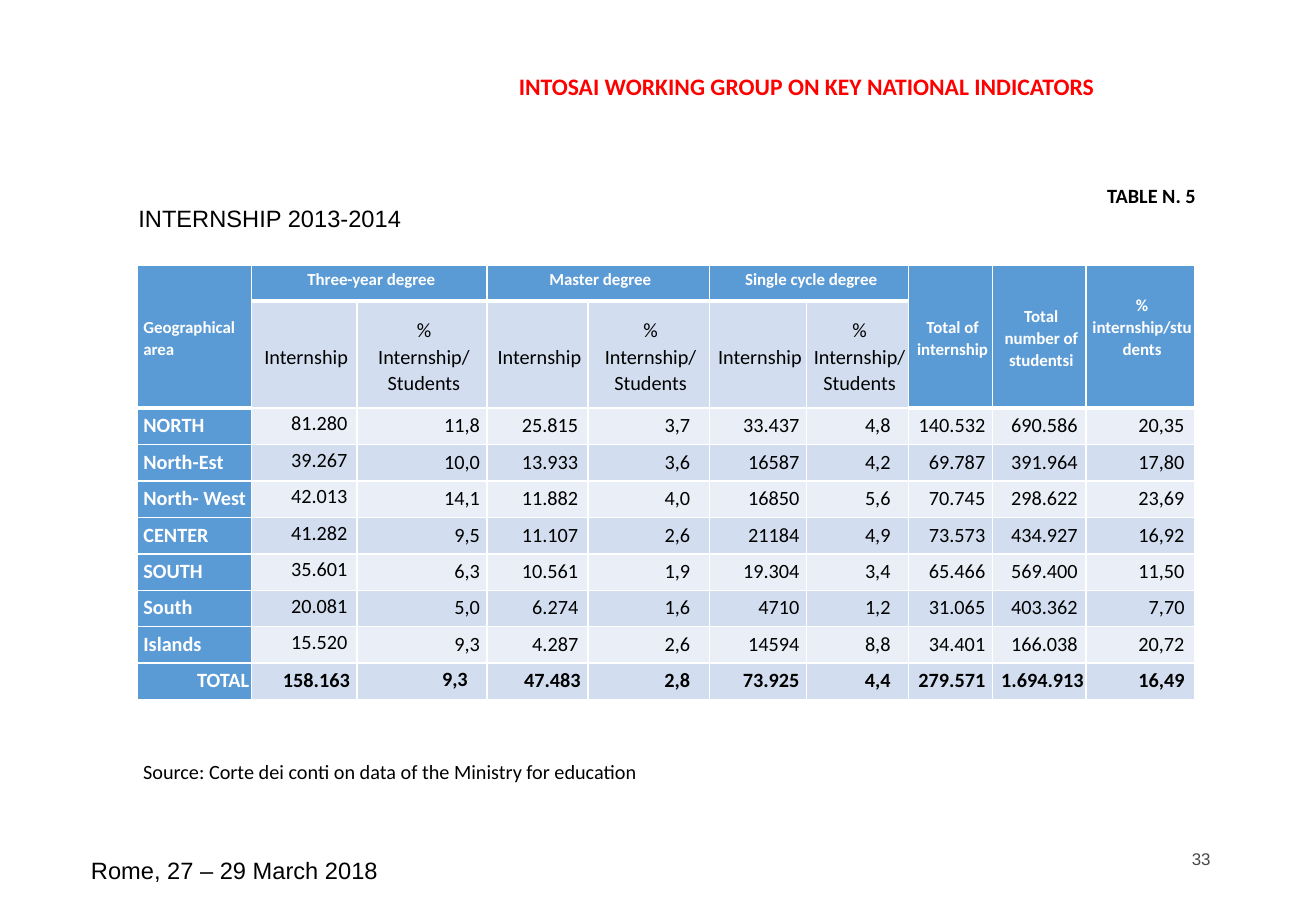
from lxml.etree import SubElement
from pptx import Presentation
from pptx.dml.color import RGBColor
from pptx.enum.text import MSO_ANCHOR, PP_ALIGN
from pptx.oxml.ns import qn
from pptx.util import Inches, Pt

COLORS = {"white": "FFFFFF", "black": "000000", "red": "FF0000", "grey": "48484A",
          "header": "5B9BD5", "light": "EAEFF7", "dark": "D2DEEF"}

COL_WIDTHS = [0.94, 0.87, 1.07, 0.83, 1, 0.8, 0.84, 0.69, 0.77, 0.89]
ROW_HEIGHTS = [0.3, 0.88] + [0.3] * 8
TALL_HEADERS = {0: "Geographical area", 7: "Total of internship",
                8: "Total number of studentsi", 9: "% internship/students"}
DEGREES = ["Three-year degree", "Master degree", "Single cycle degree"]
AREAS = [
    "NORTH|81.280|11,8|25.815|3,7|33.437|4,8|140.532|690.586|20,35",
    "North-Est|39.267|10,0|13.933|3,6|16587|4,2|69.787|391.964|17,80",
    "North- West|42.013|14,1|11.882|4,0|16850|5,6|70.745|298.622|23,69",
    "CENTER|41.282|9,5|11.107|2,6|21184|4,9|73.573|434.927|16,92",
    "SOUTH|35.601|6,3|10.561|1,9|19.304|3,4|65.466|569.400|11,50",
    "South|20.081|5,0|6.274|1,6|4710|1,2|31.065|403.362|7,70",
    "Islands|15.520|9,3|4.287|2,6|14594|8,8|34.401|166.038|20,72",
    "TOTAL|158.163|9,3|47.483|2,8|73.925|4,4|279.571|1.694.913|16,49",
]
# Right cell margins, one per column
AREA_MARGINS = [0.02, 0.08, 0.06, 0.08, 0.16, 0.06, 0.15, 0.06, 0.07, 0.08]
TOTAL_MARGINS = [0.02, 0.06, 0.16, 0.06, 0.16, 0.06, 0.15, 0.06, 0.02, 0.08]


def rgb(name):
    return RGBColor.from_string(COLORS[name])


def write(tf, text, size=12, font="Calibri", color="black", bold=False,
          align=PP_ALIGN.LEFT, spacing=1.0):
    """Write each line of the text as one paragraph."""
    tf.word_wrap = True
    for i, line in enumerate(text.split("\n")):
        p = tf.paragraphs[0] if i == 0 else tf.add_paragraph()
        p.alignment, p.line_spacing = align, spacing
        r = p.add_run()
        r.text = line
        r.font.size, r.font.name, r.font.bold = Pt(size), font, bold
        r.font.color.rgb = rgb(color)


def add_label(slide, box, text, inset=0.1, fill=None, **fmt):
    sp = slide.shapes.add_textbox(*map(Inches, box))
    if fill:
        sp.fill.solid()
        sp.fill.fore_color.rgb = rgb(fill)
    tf = sp.text_frame
    tf.margin_left = tf.margin_right = Inches(inset)
    tf.margin_top = tf.margin_bottom = 0
    tf.vertical_anchor = MSO_ANCHOR.MIDDLE
    write(tf, text, **fmt)


def rule_below(row, col):
    """Width in points of the line under a cell: thick below the headers."""
    tall = col in TALL_HEADERS
    return 3 if (row == 1 and tall) or (row == 0 and not tall) else 1


def style_cell(cell, row, col):
    tc_pr = cell._tc.get_or_add_tcPr()
    widths = {"L": 1, "R": 1, "T": rule_below(row - 1, col), "B": rule_below(row, col)}
    for side, width in widths.items():
        ln = SubElement(tc_pr, qn(f"a:ln{side}"), w=str(Pt(width)))
        SubElement(SubElement(ln, qn("a:solidFill")), qn("a:srgbClr"), val=COLORS["white"])
    if row == 0 or col in TALL_HEADERS and row == 1 or col == 0:
        fill = "header"
    else:
        fill = "dark" if row % 2 or row == 1 else "light"
    cell.fill.solid()
    cell.fill.fore_color.rgb = rgb(fill)
    cell.margin_left, cell.margin_top = Inches(0.05), Inches(0.03)
    cell.margin_right, cell.margin_bottom = Inches(0.02), 0


def fill_headers(table):
    head = dict(size=10, color="white", bold=True, spacing=1.07)
    for col, text in TALL_HEADERS.items():
        cell = table.cell(0, col)
        cell.merge(table.cell(1, col))
        cell.vertical_anchor = MSO_ANCHOR.MIDDLE
        write(cell.text_frame, text, align=PP_ALIGN.CENTER if col else PP_ALIGN.LEFT, **head)
    table.cell(0, 9).margin_bottom = Inches(0.18)
    for i, degree in enumerate(DEGREES):
        col = 1 + 2 * i
        table.cell(0, col).merge(table.cell(0, col + 1))
        write(table.cell(0, col).text_frame, degree, align=PP_ALIGN.CENTER, **head)
        for k, text in enumerate(["Internship", "%\nInternship/\nStudents"]):
            cell = table.cell(1, col + k)
            cell.vertical_anchor = MSO_ANCHOR.MIDDLE
            write(cell.text_frame, text, align=PP_ALIGN.CENTER, spacing=1.07)


def fill_areas(table):
    for row, line in enumerate(AREAS, start=2):
        values = line.split("|")
        total = values[0] == "TOTAL"
        margins = TOTAL_MARGINS if total else AREA_MARGINS
        for col, (text, margin) in enumerate(zip(values, margins)):
            cell = table.cell(row, col)
            cell.margin_right = Inches(margin)
            write(cell.text_frame, text, color="black" if col else "white",
                  bold=total or col == 0,
                  align=PP_ALIGN.RIGHT if col or total else PP_ALIGN.LEFT,
                  spacing=1.0 if col == (2 if total else 1) else 1.07)


def add_internship_table(slide, left, top):
    table = slide.shapes.add_table(
        len(ROW_HEIGHTS), len(COL_WIDTHS), Inches(left), Inches(top),
        Inches(sum(COL_WIDTHS)), Inches(sum(ROW_HEIGHTS))).table
    table.first_row = table.horz_banding = False
    for column, width in zip(table.columns, COL_WIDTHS):
        column.width = Inches(width)
    for r, height in enumerate(ROW_HEIGHTS):
        table.rows[r].height = Inches(height)
        for c in range(len(COL_WIDTHS)):
            style_cell(table.cell(r, c), r, c)
    fill_headers(table)
    fill_areas(table)


def main():
    prs = Presentation()
    prs.slide_width, prs.slide_height = Inches(10.83), Inches(7.5)
    slide = prs.slides.add_slide(prs.slide_layouts[6])
    add_label(slide, (4.21, 0.56, 4.95, 0.3),
              "INTOSAI WORKING GROUP ON KEY NATIONAL INDICATORS",
              inset=0.06, fill="white", size=14, color="red", bold=True)
    add_label(slide, (7.62, 6.87, 2.44, 0.4), "33", size=10, font="Arial",
              color="grey", align=PP_ALIGN.RIGHT)
    add_internship_table(slide, 1.13, 2.18)
    add_label(slide, (1.04, 1.61, 2.42, 0.37), "INTERNSHIP 2013-2014",
              fill="white", size=14, font="Arial")
    add_label(slide, (1.08, 6.11, 6.06, 0.48),
              "Source: Corte dei conti on data of the Ministry for education", fill="white")
    add_label(slide, (8.94, 1.51, 1, 0.19), "TABLE N. 5", fill="white",
              bold=True, align=PP_ALIGN.RIGHT)
    add_label(slide, (0.65, 6.99, 2.69, 0.34), "Rome, 27 – 29 March 2018",
              size=14, font="Arial")
    prs.save("out.pptx")


if __name__ == "__main__":
    main()
